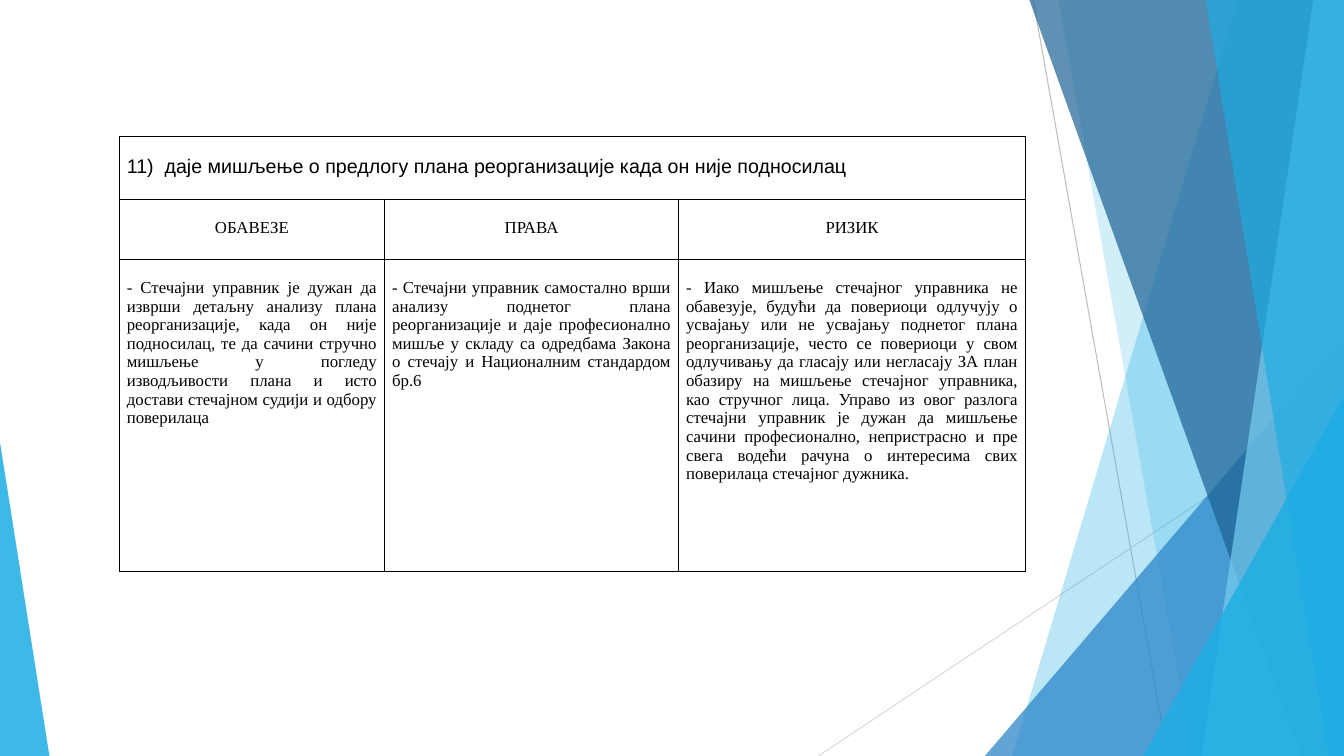
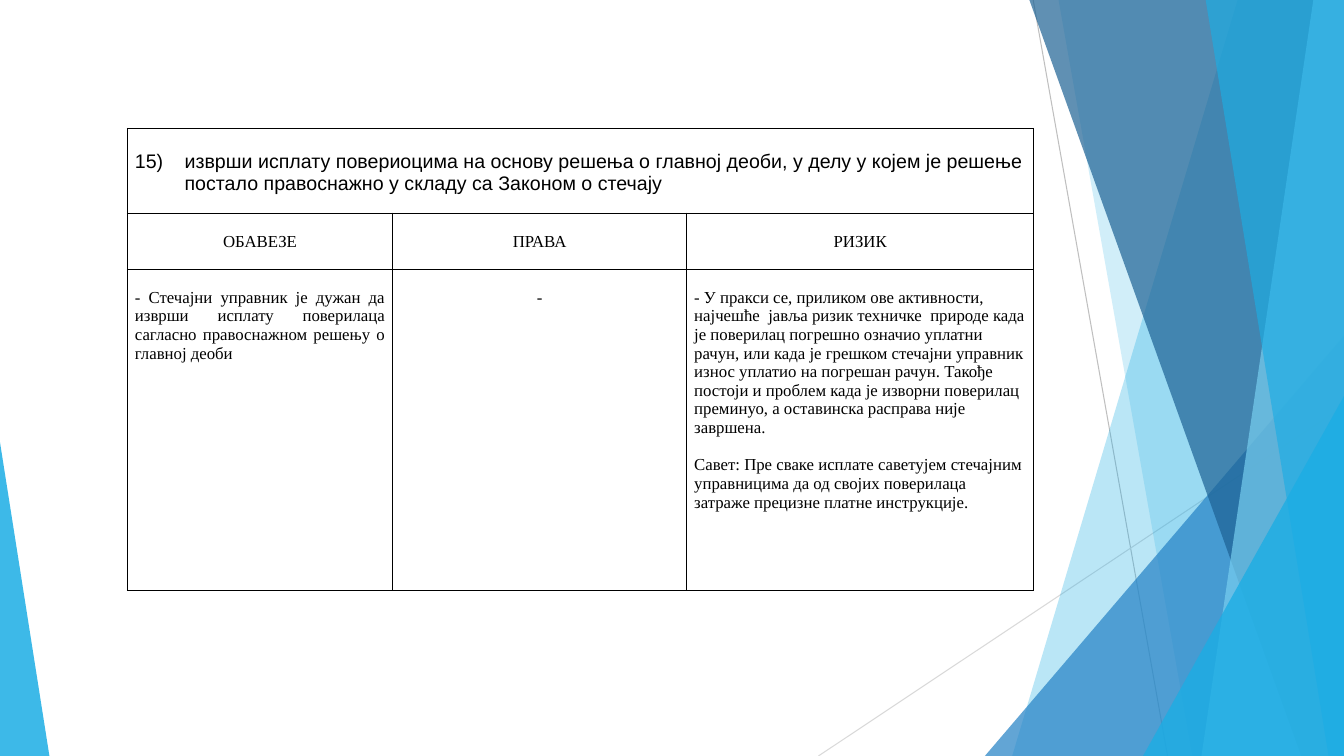
from lxml import etree
from pptx import Presentation
from pptx.dml.color import RGBColor
from pptx.enum import shapes, text
from pptx.oxml import ns
from pptx.util import Pt

WIDTH, HEIGHT = 960, 540
TOP = -0.6  # the facets start slightly above the slide

BLACK = RGBColor(0x00, 0x00, 0x00)
GREY = RGBColor(0xBF, 0xBF, 0xBF)
LIGHT_GREY = RGBColor(0xD9, 0xD9, 0xD9)
CYAN = RGBColor(0x1C, 0xAD, 0xE4)
BLUE = RGBColor(0x26, 0x83, 0xC6)
NAVY = RGBColor(0x1D, 0x62, 0x94)
PALE_CYAN = RGBColor(0x77, 0xCE, 0xEF)

HEADING_FONT, BODY_FONT = "Arial", "Times New Roman"
COLUMN_WIDTHS = (189.5, 210, 248)
COLUMN_NAMES = ("ОБАВЕЗЕ", "ПРАВА", "РИЗИК")
SIDE_MARGIN, TOP_MARGIN = 5.4, 13.5
LEFT, CENTER, JUSTIFY = (text.PP_ALIGN.LEFT, text.PP_ALIGN.CENTER,
                         text.PP_ALIGN.JUSTIFY)


class Deck:
    """Holds the style and the current slide."""

    def __init__(self):
        self.presentation = Presentation()
        self.presentation.slide_width = Pt(WIDTH)
        self.presentation.slide_height = Pt(HEIGHT)
        self.layout = self.presentation.slide_layouts[6]
        self.slide = None

    def add_slide(self):
        self.slide = self.presentation.slides.add_slide(self.layout)

    def move_to_layout(self):
        """Make everything on the current slide part of the shared layout."""
        for placeholder in list(self.layout.placeholders):
            self.layout.shapes.element.remove(placeholder.element)
        for shape in list(self.slide.shapes):
            self.layout.shapes.element.append(shape.element)

    # Decoration
    def line(self, start, end, color):
        connector = self.slide.shapes.add_connector(
            shapes.MSO_CONNECTOR.STRAIGHT, *map(Pt, start + end))
        connector.line.color.rgb = color
        connector.line.width = Pt(0.75)
        etree.SubElement(connector.element.spPr, ns.qn("a:effectLst"))

    def paint(self, shape, color, opacity):
        shape.shadow.inherit = False
        shape.line.fill.background()
        shape.fill.solid()
        shape.fill.fore_color.rgb = color
        color_element = shape.element.spPr.find(".//" + ns.qn("a:srgbClr"))
        etree.SubElement(color_element, ns.qn("a:alpha"),
                         val=str(opacity * 1000))

    def facet(self, top_x, bottom_x, color, opacity):
        """Fill from a slanted left edge to the right side of the slide."""
        builder = self.slide.shapes.build_freeform(Pt(top_x), Pt(TOP))
        corners = ((WIDTH, TOP), (WIDTH, HEIGHT), (bottom_x, HEIGHT))
        builder.add_line_segments([(Pt(x), Pt(y)) for x, y in corners])
        self.paint(builder.convert_to_shape(), color, opacity)

    def triangle(self, left, top, width, apex, color, opacity):
        """Stand a triangle on the bottom edge; apex is 0 left, 1 right."""
        shape = self.slide.shapes.add_shape(
            shapes.MSO_SHAPE.ISOSCELES_TRIANGLE, Pt(left), Pt(top),
            Pt(width), Pt(HEIGHT - top))
        shape.adjustments[0] = apex
        self.paint(shape, color, opacity)

    # Table
    def style_cell(self, cell):
        cell.margin_left = cell.margin_right = Pt(SIDE_MARGIN)
        cell.margin_top, cell.margin_bottom = Pt(TOP_MARGIN), Pt(0)
        cell.fill.background()
        properties = cell._tc.get_or_add_tcPr()
        for index, side in enumerate(("lnL", "lnR", "lnT", "lnB")):
            border = etree.Element(ns.qn("a:" + side), w=str(Pt(1)))
            fill = etree.SubElement(border, ns.qn("a:solidFill"))
            etree.SubElement(fill, ns.qn("a:srgbClr"), val=str(BLACK))
            properties.insert(index, border)

    def fill_cell(self, cell, paragraphs, alignment, size=12, font=BODY_FONT):
        frame = cell.text_frame
        for index, content in enumerate(paragraphs):
            paragraph = frame.add_paragraph() if index else frame.paragraphs[0]
            paragraph.text = content
            paragraph.alignment = alignment
            paragraph.font.size = Pt(size)
            paragraph.font.name = font
            paragraph.font.color.rgb = BLACK
            if index:
                paragraph.space_before = Pt(13.3)

    def number(self, cell, start, indent):
        properties = cell.text_frame.paragraphs[0]._p.get_or_add_pPr()
        properties.set("marL", str(Pt(indent)))
        properties.set("indent", str(-Pt(indent)))
        bullet = etree.Element(ns.qn("a:buAutoNum"), type="arabicParenR",
                               startAt=str(start))
        properties.find(ns.qn("a:defRPr")).addprevious(bullet)

    def duty_table(self, left, top, row_heights, start, indent, heading,
                   entries, heading_margin=TOP_MARGIN):
        """entries holds an (alignment, paragraphs) pair for each column."""
        table = self.slide.shapes.add_table(
            len(row_heights), len(COLUMN_WIDTHS), Pt(left), Pt(top),
            Pt(sum(COLUMN_WIDTHS)), Pt(sum(row_heights))).table
        table.first_row = table.horz_banding = False
        for column, width in zip(table.columns, COLUMN_WIDTHS):
            column.width = Pt(width)
        for row, height in zip(table.rows, row_heights):
            row.height = Pt(height)
        for cell in table.iter_cells():
            self.style_cell(cell)

        # Numbered heading across all columns
        heading_cell = table.cell(0, 0)
        heading_cell.merge(table.cell(0, len(COLUMN_WIDTHS) - 1))
        heading_cell.margin_top = Pt(heading_margin)
        self.fill_cell(heading_cell, [heading], LEFT, 14, HEADING_FONT)
        self.number(heading_cell, start, indent)

        # Column names and entries
        for index, name in enumerate(COLUMN_NAMES):
            self.fill_cell(table.cell(1, index), [name], CENTER)
            alignment, paragraphs = entries[index]
            self.fill_cell(table.cell(2, index), paragraphs, alignment)


def add_background(deck):
    deck.line((738, 0), (834, HEIGHT), GREY)
    deck.line((WIDTH, 290), (584.6, HEIGHT), LIGHT_GREY)
    deck.facet(884.2, 723, CYAN, 30)
    deck.facet(756, 851.8, CYAN, 20)
    deck.triangle(703.5, 239.8, 256.5, 1, BLUE, 72)
    deck.facet(735.1, 929.5, NAVY, 70)
    deck.facet(938.2, 858.2, PALE_CYAN, 70)
    deck.facet(861.1, 949, CYAN, 65)
    deck.triangle(816.5, 283, 143.5, 1, CYAN, 80)
    deck.triangle(0, 316, 35.3, 0, CYAN, 85)
    deck.move_to_layout()


def main():
    deck = Deck()

    # Slide 1: opinion on the reorganisation plan
    deck.add_slide()
    add_background(deck)
    deck.duty_table(
        85.2, 97.4, (45, 43, 223), 11, 27,
        "даје мишљење о предлогу плана реорганизације када он није подносилац",
        [(JUSTIFY, [
            "- Стечајни управник је дужан да изврши детаљну анализу плана "
            "реорганизације, када он није подносилац, те да сачини стручно "
            "мишљење у погледу изводљивости плана и исто достави стечајном "
            "судији и одбору поверилаца"]),
         (JUSTIFY, [
             "- Стечајни управник самостално врши анализу поднетог плана "
             "реорганизације и даје професионално мишље у складу са "
             "одредбама Закона о стечају и Националним стандардом бр.6"]),
         (JUSTIFY, [
             "- Иако мишљење стечајног управника не обавезује, будући да "
             "повериоци одлучују о усвајању или не усвајању поднетог плана "
             "реорганизације, често се повериоци у свом одлучивању да "
             "гласају или негласају ЗА план обазиру на мишљење стечајног "
             "управника, као стручног лица. Управо из овог разлога стечајни "
             "управник је дужан да мишљење сачини професионално, "
             "непристрасно и пре свега водећи рачуна о интересима свих "
             "поверилаца стечајног дужника."])])

    # Slide 2: payment to creditors
    deck.add_slide()
    deck.duty_table(
        91, 91.8, (60.5, 40, 229.5), 15, 35.5,
        "изврши исплату повериоцима на основу решења о главној деоби, у делу "
        "у којем је решење постало правоснажно у складу са Законом о стечају",
        [(JUSTIFY, [
            "- Стечајни управник је дужан да изврши исплату поверилаца "
            "сагласно правоснажном решењу о главној деоби"]),
         (CENTER, ["-"]),
         (LEFT, [
             "- У пракси се, приликом ове активности, најчешће  јавља ризик "
             "техничке  природе када је поверилац погрешно означио уплатни "
             "рачун, или када је грешком стечајни управник износ уплатио на "
             "погрешан рачун. Такође постоји и проблем када је изворни "
             "поверилац преминуо, а оставинска расправа није завршена.",
             "Савет: Пре сваке исплате саветујем стечајним управницима да од "
             "својих поверилаца затраже прецизне платне инструкције."])],
        heading_margin=16)

    deck.presentation.save("out.pptx")


if __name__ == "__main__":
    main()
